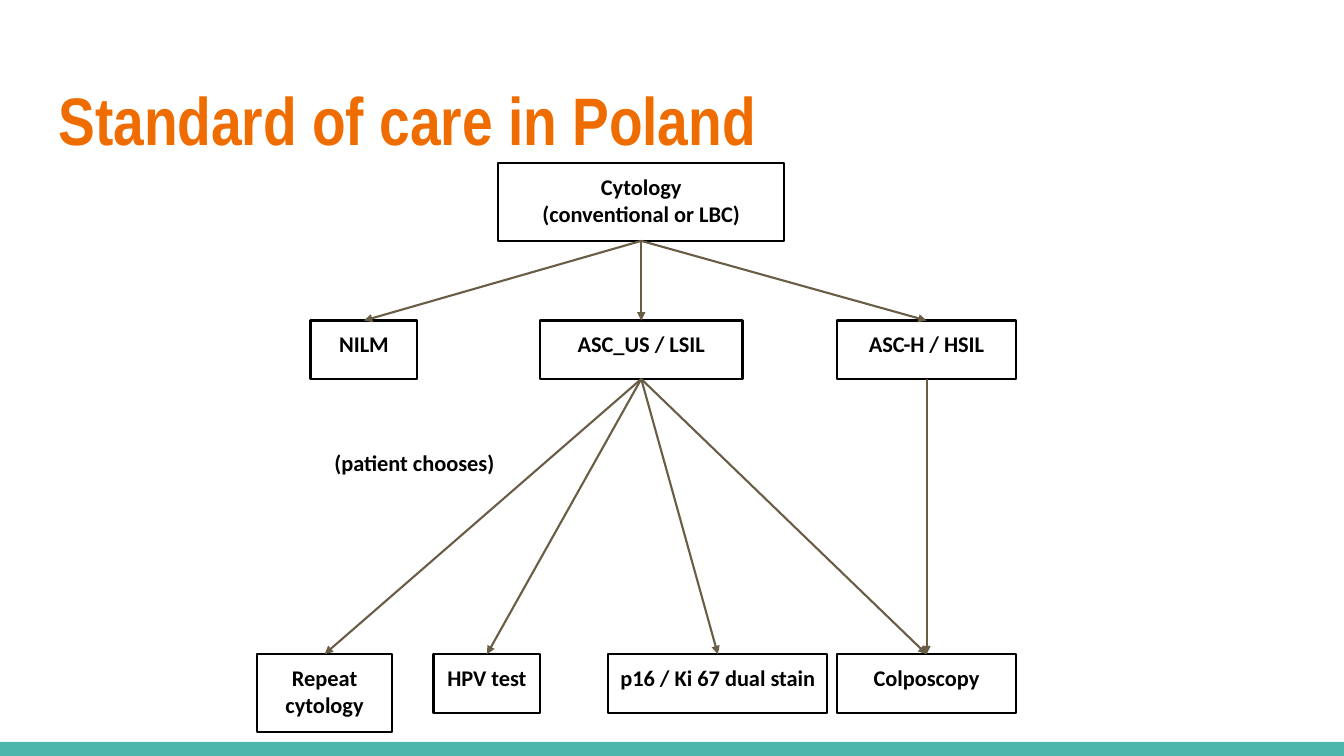
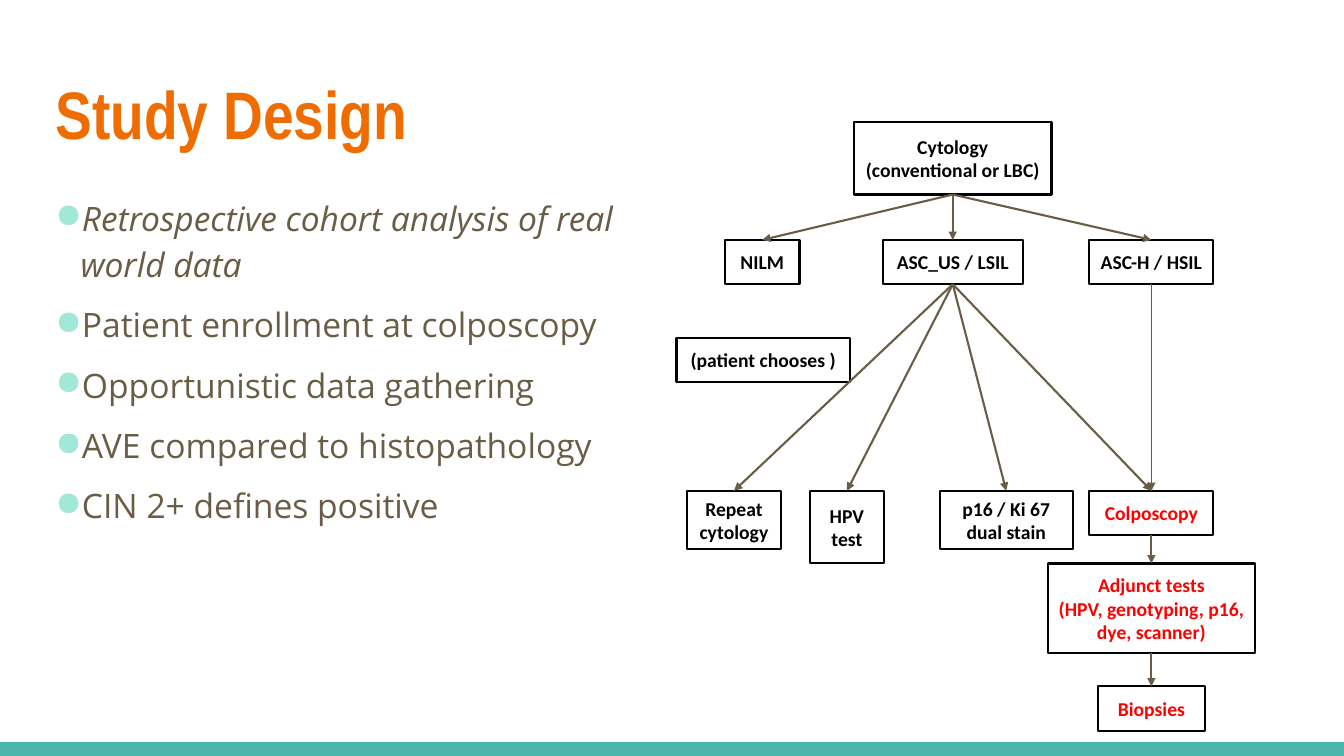
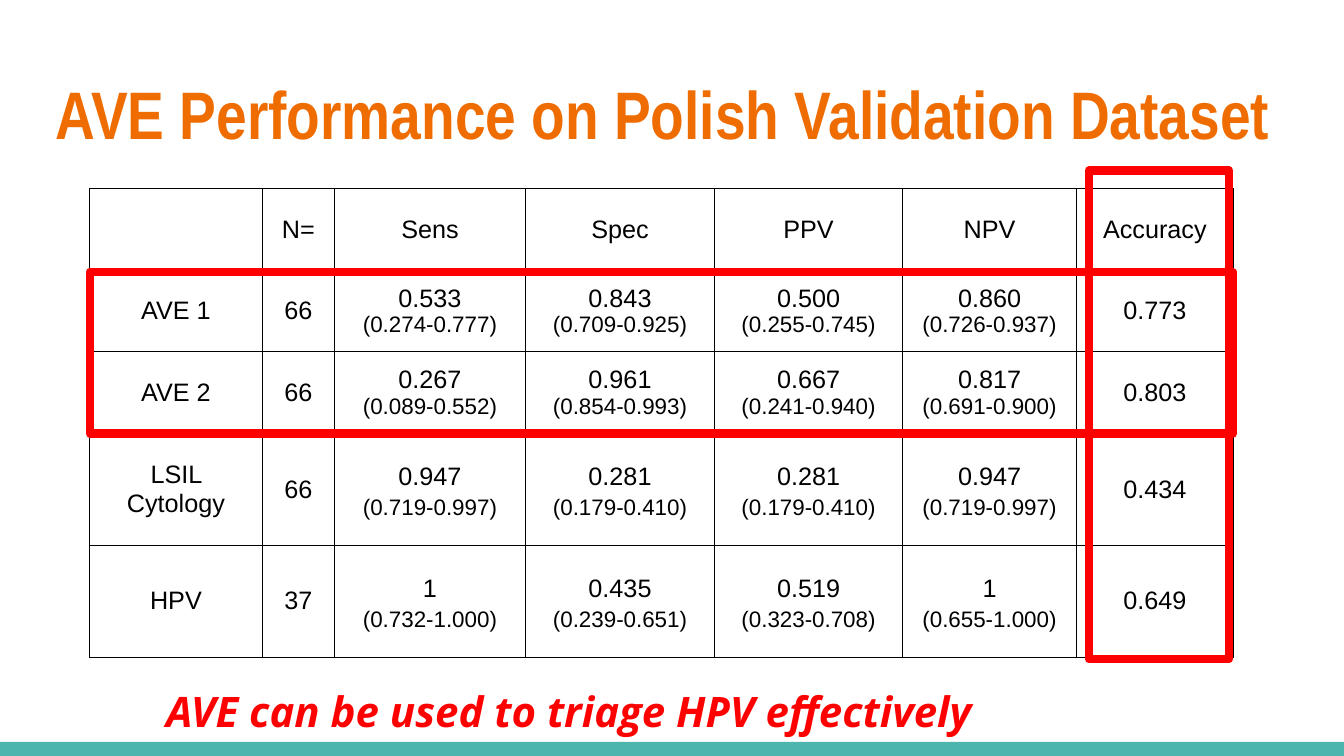
import lxml.etree
import pptx
import pptx.dml.color
import pptx.enum.shapes
import pptx.enum.text
import pptx.oxml.ns
import pptx.util

Inches = pptx.util.Inches
Pt = pptx.util.Pt
RGBColor = pptx.dml.color.RGBColor
Align = pptx.enum.text.PP_ALIGN
Anchor = pptx.enum.text.MSO_ANCHOR
RECTANGLE = pptx.enum.shapes.MSO_SHAPE.RECTANGLE
STRAIGHT = pptx.enum.shapes.MSO_CONNECTOR.STRAIGHT
qn = pptx.oxml.ns.qn

ORANGE = RGBColor(0xEF, 0x6C, 0x00)
TEAL = RGBColor(0x4D, 0xB6, 0xAC)
MINT = RGBColor(0xA1, 0xE8, 0xD9)
BROWN = RGBColor(0x69, 0x5D, 0x46)
BLACK = RGBColor(0, 0, 0)
RED = RGBColor(0xFF, 0, 0)

WIDTH, HEIGHT = 13.33, 7.5
MARGIN = 0.45
BAND_HEIGHT = 0.14
TOP, BOTTOM = 0, 2  # connection sites of a rectangle


def write(frame, text, font, size, color, bold=False, italic=False,
          align=Align.LEFT, anchor=Anchor.TOP, inset=(0.1, 0.1), spacing=None):
    """Fill a text frame, one paragraph per line; inset is (sides, top and bottom)."""
    frame.text = text
    frame.word_wrap = True
    frame.auto_size = pptx.enum.text.MSO_AUTO_SIZE.NONE
    frame.vertical_anchor = anchor
    frame.margin_left = frame.margin_right = Inches(inset[0])
    frame.margin_top = frame.margin_bottom = Inches(inset[1])
    for para in frame.paragraphs:
        para.alignment = align
        para.line_spacing = spacing
        for span in para.runs:
            span.font.name = font
            span.font.size = Pt(size)
            span.font.bold = bold
            span.font.italic = italic
            span.font.color.rgb = color


def add_outline(page, left, top, width, height, color, weight):
    shape = page.shapes.add_shape(
        RECTANGLE, Inches(left), Inches(top), Inches(width), Inches(height))
    shape.shadow.inherit = False
    shape.fill.background()
    shape.line.color.rgb = color
    shape.line.width = Pt(weight)
    return shape


# Shared look: title place and bottom band live on the layout
deck = pptx.Presentation()
deck.slide_width, deck.slide_height = Inches(WIDTH), Inches(HEIGHT)
layout = deck.slide_layouts.get_by_name("Title Only")
layout_title = layout.placeholders[0]
layout_title.left, layout_title.top = Inches(MARGIN), Inches(0.65)
layout_title.width, layout_title.height = Inches(12.42), Inches(1.03)

titles = [
    ("Standard of care in Poland", Anchor.TOP, (0.13, 0.13), 1.0),
    ("Study Design", Anchor.MIDDLE, (0.1, 0.05), 0.9),
    ("AVE Performance on Polish Validation Dataset", Anchor.MIDDLE, (0.1, 0.05), 0.9),
]
for title, anchor, inset, spacing in titles:
    page = deck.slides.add_slide(layout)
    write(page.shapes.title.text_frame, title, "Arial Narrow", 48, ORANGE, bold=True,
          anchor=anchor, inset=inset, spacing=spacing)
care_page, design_page, result_page = deck.slides

band = add_outline(care_page, 0, HEIGHT - BAND_HEIGHT, WIDTH, BAND_HEIGHT, TEAL, 0)
band.fill.solid()
band.fill.fore_color.rgb = TEAL
band.line.fill.background()
band.element.xpath(".//p:cNvPr")[0].set("id", "99")
layout.shapes.element.append(band.element)

# Slide 2 bullets
points = design_page.shapes.add_textbox(
    Inches(MARGIN), Inches(1.85), Inches(6.25), Inches(4.82)).text_frame
write(points, "Retrospective cohort analysis of real world data\n"
      "Patient enrollment at colposcopy\nOpportunistic data gathering\n"
      "AVE compared to histopathology\nCIN 2+ defines positive",
      "Open Sans", 24, BROWN, inset=(0.1, 0.05), spacing=1.15)
points.paragraphs[0].runs[0].font.italic = True
for number, para in enumerate(points.paragraphs):
    para.space_before = Pt(10 if number else 0)
    props = para._p.get_or_add_pPr()
    props.set("marL", str(Inches(0.25)))
    props.set("indent", str(-Inches(0.25)))
    bullet_color = lxml.etree.SubElement(props, qn("a:buClr"))
    lxml.etree.SubElement(bullet_color, qn("a:srgbClr")).set("val", str(MINT))
    lxml.etree.SubElement(props, qn("a:buChar")).set("char", "●")

# Flowcharts: each box is text, centre x, row top, width, height, colour
care_rows = [1.62, 3.18, 6.49]
care_boxes = {
    "cytology": ("Cytology\n(conventional or LBC)", 6.36, care_rows[0], 2.84, 0.77, BLACK),
    "nilm": ("NILM", 3.61, care_rows[1], 1.06, 0.58, BLACK),
    "low": ("ASC_US / LSIL", 6.36, care_rows[1], 2.01, 0.58, BLACK),
    "high": ("ASC-H / HSIL", 9.19, care_rows[1], 1.77, 0.58, BLACK),
    "repeat": ("Repeat cytology", 3.22, care_rows[2], 1.34, 0.77, BLACK),
    "hpv": ("HPV test", 4.83, care_rows[2], 1.06, 0.58, BLACK),
    "stain": ("p16 / Ki 67 dual stain", 7.12, care_rows[2], 2.17, 0.58, BLACK),
    "colposcopy": ("Colposcopy", 9.19, care_rows[2], 1.77, 0.58, BLACK),
    "choice": ("(patient chooses)", 4.11, 4.36, 2.48, 0.46, BLACK),
}
design_rows = [1.21, 2.38, 3.35, 4.87, 5.59, 6.81]
design_boxes = {
    "cytology": ("Cytology\n(conventional or LBC)", 9.45, design_rows[0], 1.96, 0.72, BLACK),
    "nilm": ("NILM", 7.56, design_rows[1], 0.74, 0.44, BLACK),
    "low": ("ASC_US / LSIL", 9.45, design_rows[1], 1.39, 0.44, BLACK),
    "high": ("ASC-H / HSIL", 11.42, design_rows[1], 1.23, 0.44, BLACK),
    "choice": ("(patient chooses )", 7.57, design_rows[2], 1.72, 0.44, BLACK),
    "repeat": ("Repeat cytology", 7.28, design_rows[3], 0.93, 0.58, BLACK),
    "hpv": ("HPV test", 8.4, design_rows[3], 0.74, 0.72, BLACK),
    "stain": ("p16 / Ki 67 dual stain", 9.98, design_rows[3], 1.32, 0.58, BLACK),
    "colposcopy": ("Colposcopy", 11.42, design_rows[3], 1.23, 0.44, RED),
    "adjunct": ("Adjunct tests\n(HPV, genotyping, p16, dye, scanner)",
                11.42, design_rows[4], 2.06, 0.89, RED),
    "biopsies": ("Biopsies", 11.42, design_rows[5], 1.06, 0.44, RED),
}
care_arrows = [("cytology", end) for end in ("nilm", "low", "high")]
care_arrows += [("low", end) for end in ("repeat", "hpv", "stain", "colposcopy")]
care_arrows += [("high", "colposcopy")]
design_arrows = care_arrows + [("colposcopy", "adjunct"), ("adjunct", "biopsies")]

flowcharts = [
    (care_page, care_boxes, care_arrows, 16, Anchor.TOP),
    (design_page, design_boxes, design_arrows, 14, Anchor.MIDDLE),
]
for page, boxes, arrows, size, anchor in flowcharts:
    drawn = {}
    for name, (text, centre, top, width, height, color) in boxes.items():
        box = add_outline(page, centre - width / 2, top, width, height, BLACK, 1.5)
        write(box.text_frame, text, "Calibri", size, color, bold=True,
              align=Align.CENTER, anchor=anchor)
        drawn[name] = box
    for start, end in arrows:
        arrow = page.shapes.add_connector(STRAIGHT, 0, 0, 0, 0)
        arrow.begin_connect(drawn[start], BOTTOM)
        arrow.end_connect(drawn[end], TOP)
        arrow.line.color.rgb = BROWN
        thin = page is design_page and start == "high"
        arrow.line.width = Pt(0.75 if thin else 1.5)
        line = arrow.element.xpath("./p:spPr/a:ln")[0]
        lxml.etree.SubElement(line, qn("a:tailEnd")).set("type", "triangle")
        lxml.etree.SubElement(arrow.element.spPr, qn("a:effectLst"))
    if page is care_page:
        drawn["choice"].line.fill.background()

# Slide 3 table
column_widths = [1.71, 0.72, 1.89, 1.88, 1.86, 1.73, 1.55]
row_heights = [0.81, 0.81, 0.81, 1.11, 1.11]
table_left, table_top = 0.89, 1.87
records = [
    ["", "N=", "Sens", "Spec", "PPV", "NPV", "Accuracy"],
    ["AVE 1", "66", "0.533\n(0.274-0.777)", "0.843\n(0.709-0.925)",
     "0.500\n(0.255-0.745)", "0.860\n(0.726-0.937)", "0.773"],
    ["AVE 2", "66", "0.267\n(0.089-0.552)", "0.961\n(0.854-0.993)",
     "0.667\n(0.241-0.940)", "0.817\n(0.691-0.900)", "0.803"],
    ["LSIL Cytology", "66", "0.947\n(0.719-0.997)", "0.281\n(0.179-0.410)",
     "0.281\n(0.179-0.410)", "0.947\n(0.719-0.997)", "0.434"],
    ["HPV", "37", "1\n(0.732-1.000)", "0.435\n(0.239-0.651)",
     "0.519\n(0.323-0.708)", "1\n(0.655-1.000)", "0.649"],
]
table = result_page.shapes.add_table(
    len(row_heights), len(column_widths), Inches(table_left), Inches(table_top),
    Inches(sum(column_widths)), Inches(sum(row_heights))).table
table.first_row = table.horz_banding = False
for column, width in zip(table.columns, column_widths):
    column.width = Inches(width)
for row, height in zip(table.rows, row_heights):
    row.height = Inches(height)

for row_number, record in enumerate(records):
    for column_number, text in enumerate(record):
        cell = table.cell(row_number, column_number)
        loose = row_number >= 3 and "\n" in text
        write(cell.text_frame, text, "Arial", 18, BLACK, align=Align.CENTER,
              spacing=1.15 if loose else None)
        for interval in cell.text_frame.paragraphs[1:]:
            interval.runs[0].font.size = Pt(16)
        cell.vertical_anchor = Anchor.MIDDLE
        cell.margin_left = cell.margin_right = Inches(0.03 if loose else 0.1)
        cell.margin_top = cell.margin_bottom = Inches(0.02 if loose else 0.1)
        props = cell._tc.get_or_add_tcPr()
        for side in ("a:lnL", "a:lnR", "a:lnT", "a:lnB"):
            border = lxml.etree.SubElement(props, qn(side))
            border.set("w", str(Pt(0.75)))
            paint = lxml.etree.SubElement(border, qn("a:solidFill"))
            lxml.etree.SubElement(paint, qn("a:srgbClr")).set("val", str(BLACK))
        cell.fill.background()

# Highlights on the accuracy column and the two AVE rows
add_outline(result_page, 10.8, 1.69, 1.39, 4.85, RED, 6)
add_outline(result_page, table_left, table_top + row_heights[0] + 0.02,
            sum(column_widths), sum(row_heights[1:3]) - 0.02, RED, 6)

conclusion = result_page.shapes.add_textbox(
    Inches(1.55), Inches(6.7), Inches(9.98), Inches(0.8))
write(conclusion.text_frame, "AVE can be used to triage HPV effectively",
      "Open Sans", 30, RED, bold=True, italic=True)

deck.save("out.pptx")
